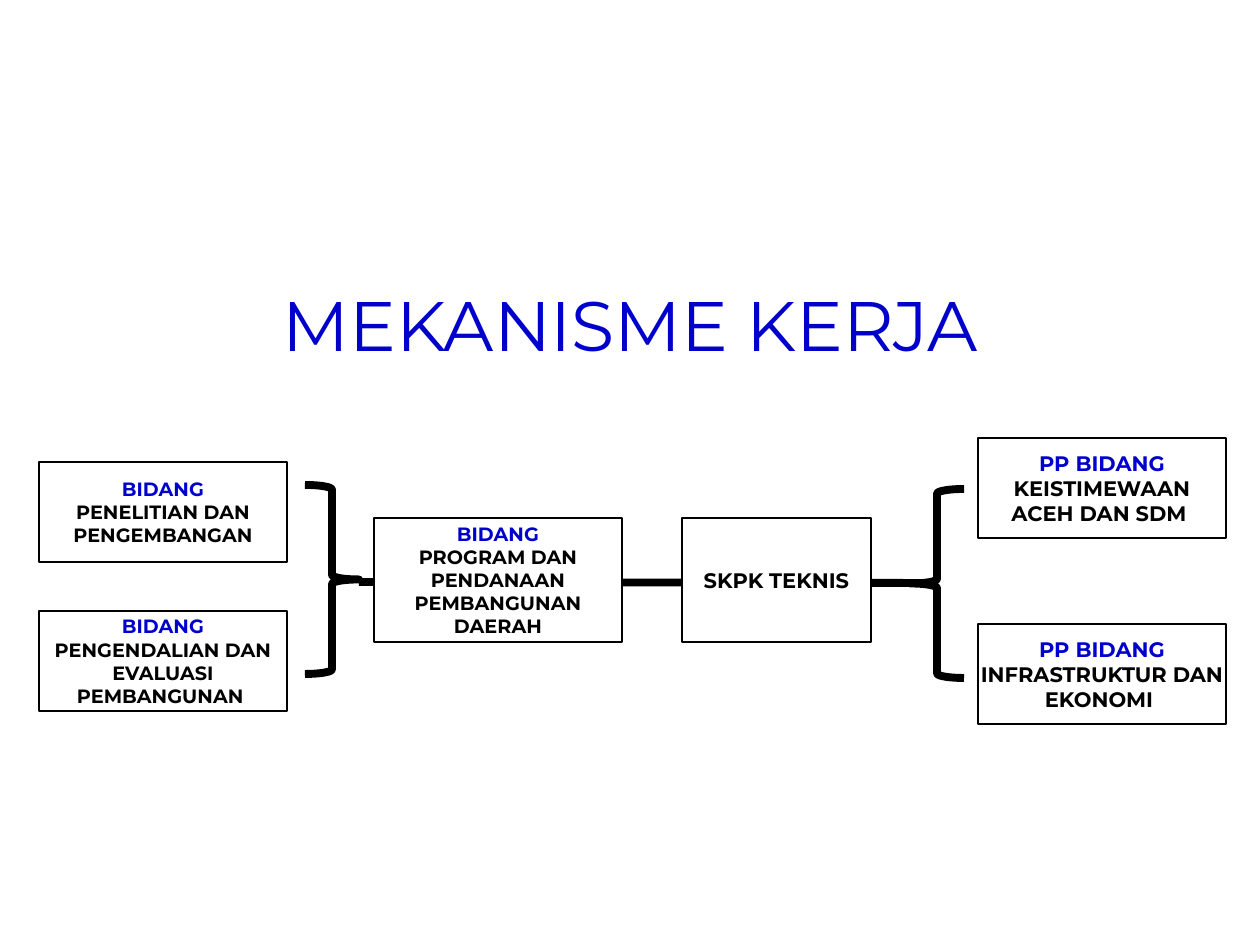
from lxml.etree import SubElement
from pptx import Presentation
from pptx.dml.color import RGBColor
from pptx.enum.shapes import MSO_CONNECTOR, MSO_SHAPE
from pptx.enum.text import MSO_ANCHOR, PP_ALIGN
from pptx.oxml.ns import qn
from pptx.util import Pt

PX = 914400 // 126
FONT = "Montserrat"
COLORS = {"blue": "0000CC", "black": "000000", "white": "FFFFFF"}

TITLE = "MEKANISME KERJA"
SIDE, CENTER = (248, 100), (248, 124)
SIDE_BOXES = [
    (978, 438, SIDE, 12, "PP BIDANG", ["KEISTIMEWAAN", "ACEH DAN SDM "]),
    (978, 624, SIDE, 12, "PP BIDANG", ["INFRASTRUKTUR DAN EKONOMI "]),
    (39, 611, SIDE, 11, "BIDANG", ["PENGENDALIAN DAN EVALUASI PEMBANGUNAN "]),
    (39, 462, SIDE, 11, "BIDANG", ["PENELITIAN DAN PENGEMBANGAN"]),
]
CENTER_BOXES = [
    (682, 518, (189, 124), 12, None, ["SKPK TEKNIS"]),
    (374, 518, CENTER, 11, "BIDANG", ["PROGRAM DAN PENDANAAN PEMBANGUNAN DAERAH"]),
]
BRACES = [(305, 485, 0), (910, 489, 180)]
BRACE_SIZE = (54, 189)
LINK = (359, 582, 920, 583)


def px(*values):
    return [v * PX for v in values]


def color(name):
    return RGBColor.from_string(COLORS[name])


def set_line(s, width):
    s.line.color.rgb = color("black")
    s.line.width = Pt(width)


def set_font(p, size, name, bold):
    p.alignment = PP_ALIGN.CENTER
    p.font.name = FONT
    p.font.size = Pt(size)
    p.font.bold = bold
    p.font.color.rgb = color(name)


def add_outline(kind, x, y, size, width):
    s = slide.shapes.add_shape(kind, *px(x, y, *size))
    s.shadow.inherit = False
    s.fill.background()
    set_line(s, width)
    return s


def add_box(x, y, size, pt, heading, lines, filled):
    s = add_outline(MSO_SHAPE.RECTANGLE, x, y, size, 1.5)
    if filled:
        s.fill.solid()
        s.fill.fore_color.rgb = color("white")
    tf = s.text_frame
    tf.word_wrap = True
    tf.vertical_anchor = MSO_ANCHOR.MIDDLE
    tf.margin_left = tf.margin_right = tf.margin_top = tf.margin_bottom = PX
    texts = ([(heading, "blue")] if heading else []) + [(t, "black") for t in lines]
    for i, (text, name) in enumerate(texts):
        p = tf.add_paragraph() if i else tf.paragraphs[0]
        p.text = text
        set_font(p, pt, name, True)


prs = Presentation()
prs.slide_width, prs.slide_height = px(1260, 945)
slide = prs.slides.add_slide(prs.slide_layouts[5])

title = slide.shapes.title
title.left, title.top, title.width, title.height = px(0, 244, 1260, 159)
title.text_frame.text = TITLE
title.text_frame.vertical_anchor = MSO_ANCHOR.MIDDLE
set_font(title.text_frame.paragraphs[0], 40, "blue", False)

for box in SIDE_BOXES:
    add_box(*box, filled=False)

for x, y, rotation in BRACES:
    brace = add_outline(MSO_SHAPE.RIGHT_BRACE, x, y, BRACE_SIZE, 4.5)
    brace.rotation = rotation

link = slide.shapes.add_connector(MSO_CONNECTOR.STRAIGHT, *px(*LINK))
set_line(link, 4.5)
SubElement(link._element.spPr, qn("a:effectLst"))

for box in CENTER_BOXES:
    add_box(*box, filled=True)

prs.save("out.pptx")
